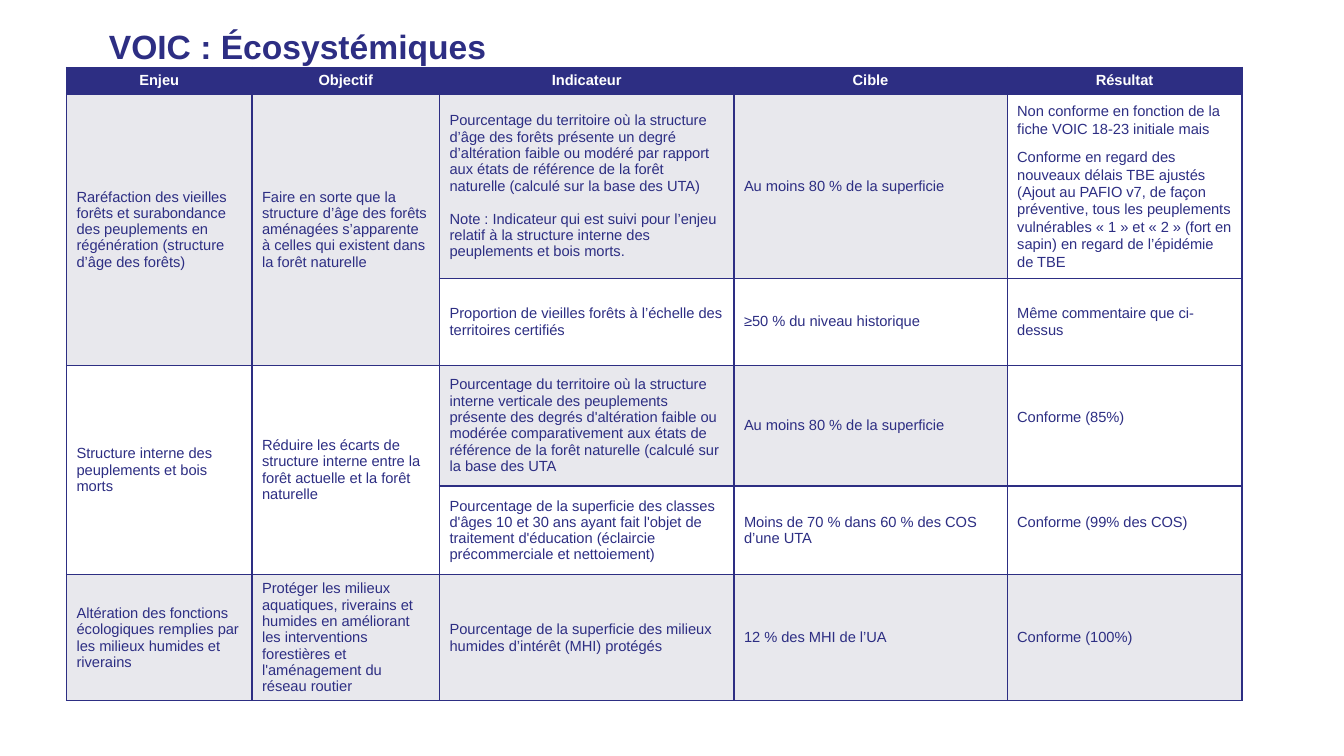
from dataclasses import dataclass
from typing import Optional

import pptx
import pptx.dml.color
import pptx.enum.text
import pptx.oxml
import pptx.oxml.ns
import pptx.table
import pptx.util
from pptx.util import Inches

RGBColor = pptx.dml.color.RGBColor
NAVY = RGBColor(0x2D, 0x2E, 0x83)
GREY = RGBColor(0xE8, 0xE8, 0xED)
WHITE = RGBColor(0xFF, 0xFF, 0xFF)
FONT = "Arial"

COLUMN_WIDTHS = [1.84, 1.86, 2.92, 2.71, 2.33]
ROW_HEIGHTS = [0.26, 1.83, 0.86, 1.2, 0.88, 1.25]
HEADERS = ["Enjeu", "Objectif", "Indicateur", "Cible", "Résultat"]


@dataclass(frozen=True)
class Entry:
    text: str
    fill: RGBColor = WHITE
    rows: int = 1
    paragraph_gap: float = 0
    line_spacing: float = 1.0
    bottom_margin: float = 0.05


ENTRIES: list[list[Optional[Entry]]] = [
    [
        Entry("Raréfaction des vieilles forêts et surabondance des peuplements en "
              "régénération (structure d’âge des forêts)", GREY, rows=2),
        Entry("Faire en sorte que la structure d’âge des forêts aménagées s’apparente "
              "à celles qui existent dans la forêt naturelle", GREY, rows=2),
        Entry("Pourcentage du territoire où la structure d’âge des forêts présente un "
              "degré d’altération faible ou modéré par rapport aux états de référence "
              "de la forêt naturelle (calculé sur la base des UTA)\n"
              "Note : Indicateur qui est suivi pour l’enjeu relatif à la structure "
              "interne des peuplements et bois morts.", GREY, paragraph_gap=12),
        Entry("Au moins 80 % de la superficie", GREY),
        Entry("Non conforme en fonction de la fiche VOIC 18-23 initiale mais\n"
              "Conforme en regard des nouveaux délais TBE ajustés (Ajout au PAFIO v7, "
              "de façon préventive, tous les peuplements vulnérables « 1 » et « 2 » "
              "(fort en sapin) en regard de l’épidémie de TBE",
              paragraph_gap=8, line_spacing=1.07),
    ],
    [
        None,
        None,
        Entry("Proportion de vieilles forêts à l’échelle des territoires certifiés"),
        Entry("≥50 % du niveau historique"),
        Entry("Même commentaire que ci-dessus"),
    ],
    [
        Entry("Structure interne des peuplements et bois morts", rows=2),
        Entry("Réduire les écarts de structure interne entre la forêt actuelle et la "
              "forêt naturelle", rows=2),
        Entry("Pourcentage du territoire où la structure interne verticale des "
              "peuplements présente des degrés d'altération faible ou modérée "
              "comparativement aux états de référence de la forêt naturelle (calculé "
              "sur la base des UTA", GREY),
        Entry("Au moins 80 % de la superficie", GREY),
        Entry("Conforme (85%)", bottom_margin=0.21),
    ],
    [
        None,
        None,
        Entry("Pourcentage de la superficie des classes d'âges 10 et 30 ans ayant fait "
              "l'objet de traitement d'éducation (éclaircie précommerciale et "
              "nettoiement)"),
        Entry("Moins de 70 % dans 60 % des COS d’une UTA"),
        Entry("Conforme (99% des COS)", bottom_margin=0.21),
    ],
    [
        Entry("Altération des fonctions écologiques remplies par les milieux humides "
              "et riverains", GREY),
        Entry("Protéger les milieux aquatiques, riverains et humides en améliorant les "
              "interventions forestières et l'aménagement du réseau routier", GREY),
        Entry("Pourcentage de la superficie des milieux humides d’intérêt (MHI) "
              "protégés", GREY),
        Entry("12 % des MHI de l’UA", GREY),
        Entry("Conforme (100%)", GREY),
    ],
]


def set_borders(cell: pptx.table._Cell) -> None:
    properties = cell._tc.get_or_add_tcPr()
    for side in ("lnL", "lnR", "lnT", "lnB"):
        properties.append(pptx.oxml.parse_xml(
            f'<a:{side} {pptx.oxml.ns.nsdecls("a")} w="12700"><a:solidFill>'
            f'<a:srgbClr val="{NAVY}"/></a:solidFill></a:{side}>'))


def style_text(frame: pptx.text.text.TextFrame, size: float, color: RGBColor,
               bold: bool, alignment: pptx.enum.text.PP_ALIGN) -> None:
    for paragraph in frame.paragraphs:
        paragraph.alignment = alignment
        for run in paragraph.runs:
            run.font.name = FONT
            run.font.size = pptx.util.Pt(size)
            run.font.bold = bold
            run.font.color.rgb = color


def fill_cell(cell: pptx.table._Cell, entry: Entry, header: bool = False) -> None:
    cell.fill.solid()
    cell.fill.fore_color.rgb = entry.fill
    cell.vertical_anchor = pptx.enum.text.MSO_ANCHOR.MIDDLE
    cell.margin_bottom = Inches(entry.bottom_margin)
    cell.text_frame.text = entry.text
    for paragraph in cell.text_frame.paragraphs:
        paragraph.line_spacing = entry.line_spacing
    for paragraph in cell.text_frame.paragraphs[1:]:
        paragraph.space_before = pptx.util.Pt(entry.paragraph_gap)
    align = pptx.enum.text.PP_ALIGN
    style_text(cell.text_frame, 10.5, WHITE if header else NAVY, header,
               align.CENTER if header else align.LEFT)


def add_title(slide: pptx.slide.Slide) -> None:
    title = slide.shapes.title
    title.left, title.top = Inches(0.98), Inches(0.25)
    title.width, title.height = Inches(11.5), Inches(0.6)
    frame = title.text_frame
    frame.text = "VOIC : Écosystémiques"
    frame.auto_size = pptx.enum.text.MSO_AUTO_SIZE.NONE
    frame.vertical_anchor = pptx.enum.text.MSO_ANCHOR.TOP
    frame.paragraphs[0].line_spacing = 0.9
    style_text(frame, 24, NAVY, True, pptx.enum.text.PP_ALIGN.LEFT)


def add_objectives_table(slide: pptx.slide.Slide) -> None:
    table = slide.shapes.add_table(
        len(ROW_HEIGHTS), len(COLUMN_WIDTHS), Inches(0.66), Inches(0.67),
        Inches(sum(COLUMN_WIDTHS)), Inches(sum(ROW_HEIGHTS))).table
    table.horz_banding = False
    for column, width in zip(table.columns, COLUMN_WIDTHS):
        column.width = Inches(width)
    for row, height in zip(table.rows, ROW_HEIGHTS):
        row.height = Inches(height)
    for cell in table.iter_cells():
        set_borders(cell)
    for index, header in enumerate(HEADERS):
        fill_cell(table.cell(0, index), Entry(header, NAVY), header=True)
    for row_index, entries in enumerate(ENTRIES, start=1):
        for column_index, entry in enumerate(entries):
            if entry is None:
                continue
            cell = table.cell(row_index, column_index)
            if entry.rows > 1:
                cell.merge(table.cell(row_index + entry.rows - 1, column_index))
            fill_cell(cell, entry)


def main() -> None:
    presentation = pptx.Presentation()
    presentation.slide_width = Inches(13.33)
    presentation.slide_height = Inches(7.5)
    slide = presentation.slides.add_slide(presentation.slide_layouts[5])
    add_title(slide)
    add_objectives_table(slide)
    presentation.save("out.pptx")


if __name__ == "__main__":
    main()
